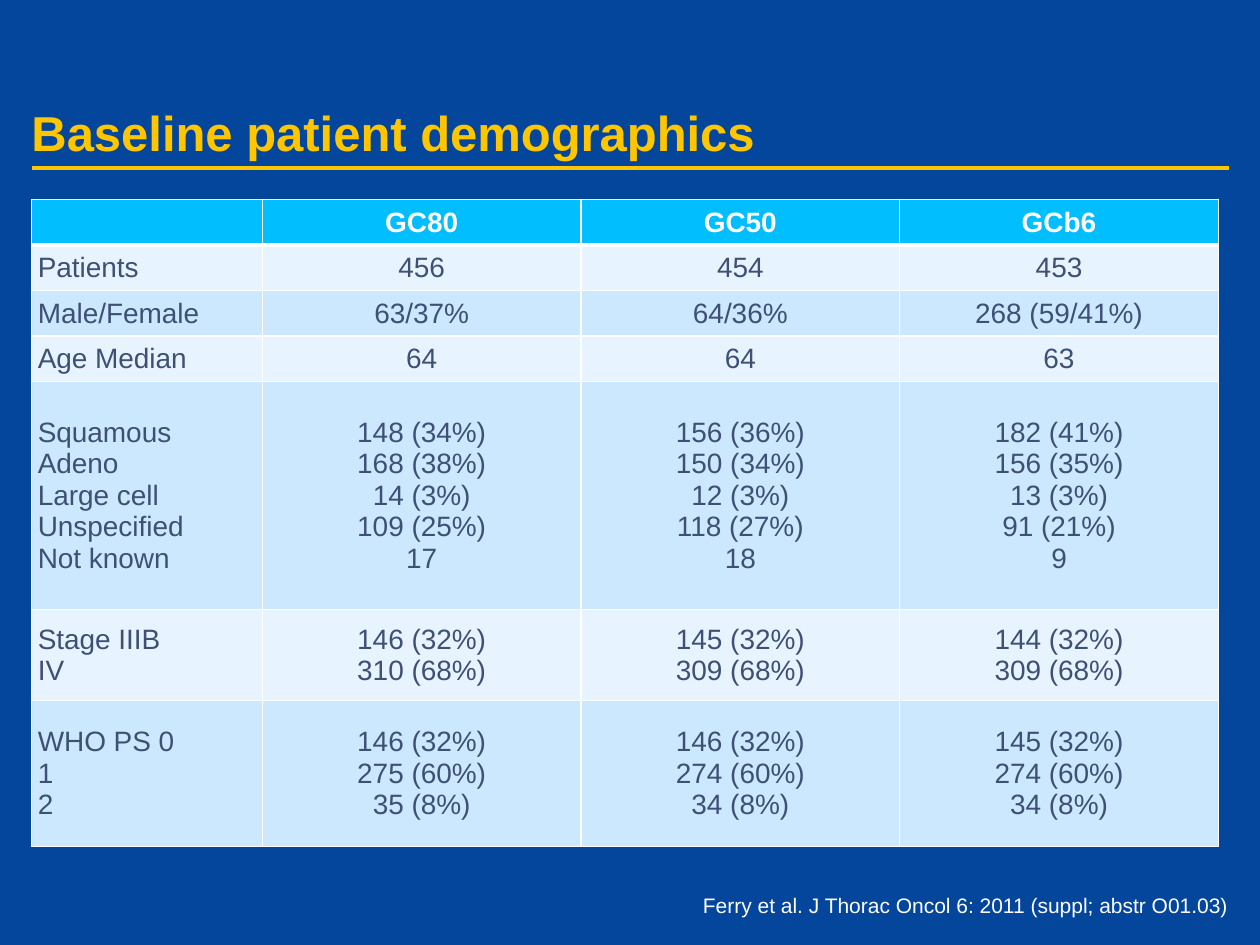
from lxml import etree
from pptx import Presentation
from pptx.dml.color import RGBColor
from pptx.enum import shapes, text
from pptx.oxml.ns import qn
from pptx.util import Pt

NAVY = RGBColor(0x03, 0x46, 0x9C)
GOLD = RGBColor(0xFF, 0xC6, 0x00)
WHITE = RGBColor(0xFF, 0xFF, 0xFF)
CYAN = RGBColor(0x00, 0xBE, 0xFF)
PALE = RGBColor(0xE7, 0xF4, 0xFF)
LIGHT = RGBColor(0xCB, 0xE8, 0xFF)
SLATE = RGBColor(0x3F, 0x50, 0x75)

FONT = "Arial"
LEFT, ALIGN = text.PP_ALIGN.LEFT, text.PP_ALIGN
ROWS = [
    ("", "GC80", "GC50", "GCb6"),
    ("Patients", "456", "454", "453"),
    ("Male/Female", "63/37%", "64/36%", "268 (59/41%)"),
    ("Age Median", "64", "64", "63"),
    ("Squamous\nAdeno\nLarge cell\nUnspecified\nNot known",
     "148 (34%)\n168 (38%)\n14 (3%)\n109 (25%)\n17",
     "156 (36%)\n150 (34%)\n12 (3%)\n118 (27%)\n18",
     "182 (41%)\n156 (35%)\n13 (3%)\n91 (21%)\n9"),
    ("Stage IIIB\nIV", "146 (32%)\n310 (68%)",
     "145 (32%)\n309 (68%)", "144 (32%)\n309 (68%)"),
    ("WHO PS 0\n1\n2", "146 (32%)\n275 (60%)\n35 (8%)",
     "146 (32%)\n274 (60%)\n34 (8%)", "145 (32%)\n274 (60%)\n34 (8%)"),
]
COL_WIDTHS = [131.9, 182.1, 182.1, 182.1]
ROW_HEIGHTS = [26, 26, 26, 26, 130.3, 52, 83.6]


def write(p, words, size, color, bold=False, align=LEFT):
    p.text = words
    p.alignment = align
    for r in p.runs:
        r.font.name, r.font.size, r.font.bold = FONT, Pt(size), bold
        r.font.color.rgb = color


def add_text(s, x, y, w, h, words, size, color, bold=False, align=LEFT,
             anchor=text.MSO_ANCHOR.TOP, top=0):
    tf = s.shapes.add_textbox(Pt(x), Pt(y), Pt(w), Pt(h)).text_frame
    tf.word_wrap = True
    tf.margin_left = tf.margin_right = tf.margin_bottom = 0
    tf.margin_top = Pt(top)
    tf.vertical_anchor = anchor
    write(tf.paragraphs[0], words, size, color, bold, align)


def add_title(s, x, y, w, h):
    add_text(s, x, y, w, h, "Baseline patient demographics", 28, GOLD, True,
             anchor=text.MSO_ANCHOR.BOTTOM, top=3.6)
    # Rule under the title
    rule_y = Pt(y + h + 3.6)
    line = s.shapes.add_connector(shapes.MSO_CONNECTOR.STRAIGHT,
                                  Pt(x), rule_y, Pt(x + w), rule_y)
    line.line.color.rgb = GOLD
    line.line.width = Pt(2.25)
    etree.SubElement(line._element.spPr, qn("a:effectLst"))


def set_borders(cell, widths):
    """Draw white borders; widths are left, right, top, bottom."""
    tcPr = cell._tc.get_or_add_tcPr()
    for i, (side, width) in enumerate(zip("LRTB", widths)):
        ln = etree.Element(qn("a:ln" + side), w=str(Pt(width)))
        fill = etree.SubElement(ln, qn("a:solidFill"))
        etree.SubElement(fill, qn("a:srgbClr"), val=str(WHITE))
        tcPr.insert(i, ln)


def add_demographics(s, x, y):
    table = s.shapes.add_table(
        len(ROWS), len(COL_WIDTHS), Pt(x), Pt(y),
        Pt(sum(COL_WIDTHS)), Pt(sum(ROW_HEIGHTS))).table
    for col, width in zip(table.columns, COL_WIDTHS):
        col.width = Pt(width)
    for i, (values, height) in enumerate(zip(ROWS, ROW_HEIGHTS)):
        table.rows[i].height = Pt(height)
        header = i == 0
        for j, value in enumerate(values):
            cell = table.cell(i, j)
            cell.margin_left = Pt(0 if header or j else 3.6)
            cell.margin_right = cell.margin_top = cell.margin_bottom = 0
            cell.vertical_anchor = text.MSO_ANCHOR.MIDDLE
            p = cell.text_frame.paragraphs[0]
            write(p, value, 16, WHITE if header else SLATE, header,
                  ALIGN.CENTER if j else LEFT)
            p.line_spacing = Pt(18)
            cell.fill.solid()
            cell.fill.fore_color.rgb = CYAN if header else PALE if i % 2 else LIGHT
            set_borders(cell, (1, 1, 2.25 if i == 1 else 1, 2.25 if header else 1))


def add_citation(s, x, y, w, h):
    add_text(s, x, y, w, h,
             "Ferry et al. J Thorac Oncol 6: 2011 (suppl; abstr O01.03)",
             12, WHITE, align=ALIGN.RIGHT)


def main():
    prs = Presentation()
    prs.slide_width, prs.slide_height = Pt(720), Pt(540)
    s = prs.slides.add_slide(prs.slide_layouts[6])
    s.background.fill.solid()
    s.background.fill.fore_color.rgb = NAVY
    add_title(s, 18, 18, 684, 74.2)
    add_demographics(s, 18, 114)
    add_citation(s, 360, 510, 342, 14.4)
    prs.save("out.pptx")


if __name__ == "__main__":
    main()
